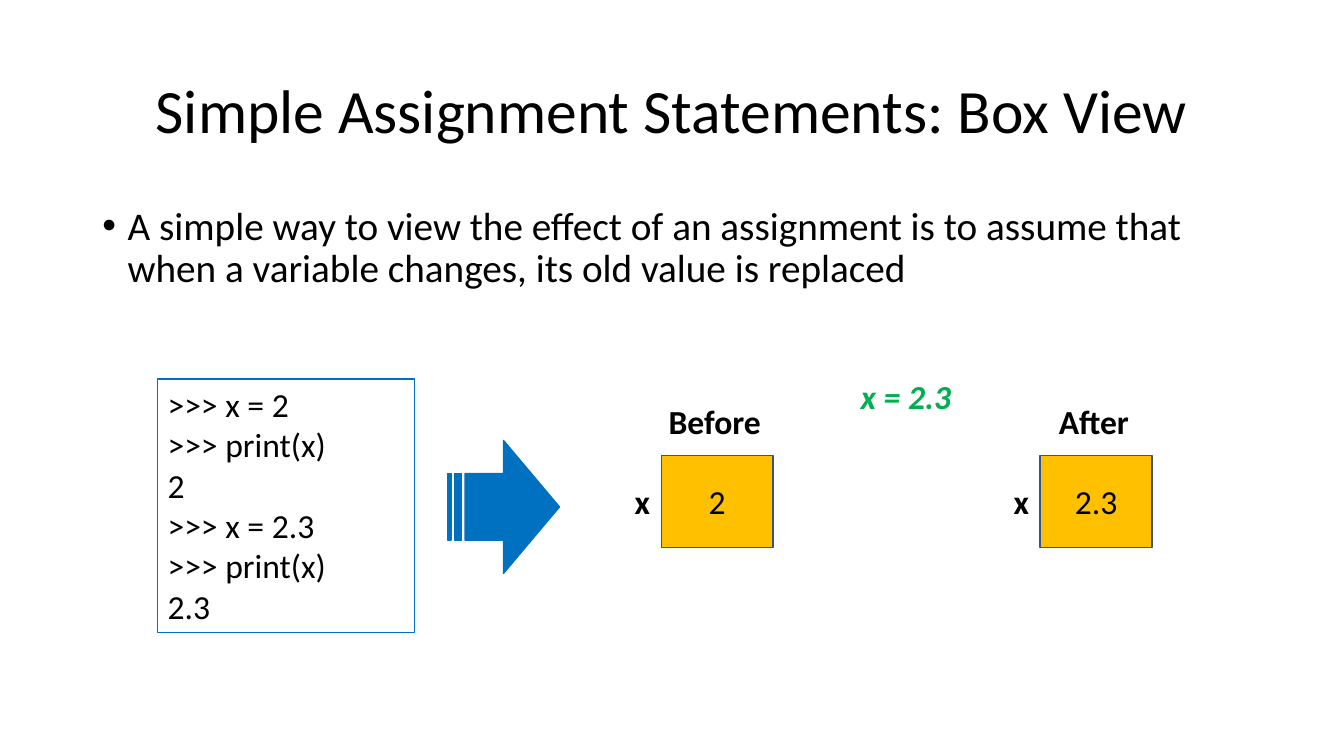
from lxml import etree
from pptx import Presentation
from pptx.dml.color import RGBColor
from pptx.enum.shapes import MSO_SHAPE
from pptx.enum.text import MSO_ANCHOR, PP_ALIGN
from pptx.oxml.ns import qn
from pptx.util import Pt

RECTANGLE = MSO_SHAPE.RECTANGLE
STRIPED_ARROW = MSO_SHAPE.STRIPED_RIGHT_ARROW
LEFT, CENTER = PP_ALIGN.LEFT, PP_ALIGN.CENTER
TOP, MIDDLE = MSO_ANCHOR.TOP, MSO_ANCHOR.MIDDLE

FONT = "Calibri"
COLORS = {
    "text": "000000",
    "blue": "0070C0",
    "amber": "FFC000",
    "box_edge": "325491",
    "green": "00B050",
}
SESSION = [">>> x = 2", ">>> print(x)", "2", ">>> x = 2.3", ">>> print(x)", "2.3"]

BOX_TOP, BOX_WIDTH, BOX_HEIGHT = 325.4, 79.9, 65.5
LABEL_HEIGHT = 36
NAME_WIDTH = 26


def rgb(name):
    return RGBColor.from_string(COLORS[name])


def place(shape, left, top, width, height):
    shape.left, shape.top = Pt(left), Pt(top)
    shape.width, shape.height = Pt(width), Pt(height)


def write(frame, lines, size=24, color="text", bold=False, italic=False,
          align=LEFT, anchor=TOP, wrap=True, line_spacing=None, space_before=None):
    frame.word_wrap = wrap
    frame.vertical_anchor = anchor
    for index, line in enumerate(lines):
        paragraph = frame.add_paragraph() if index else frame.paragraphs[0]
        paragraph.alignment = align
        if line_spacing is not None:
            paragraph.line_spacing = line_spacing
        if space_before is not None:
            paragraph.space_before = Pt(space_before)
        run = paragraph.add_run()
        run.text = line
        font = run.font
        font.name, font.size = FONT, Pt(size)
        font.bold, font.italic = bold, italic
        font.color.rgb = rgb(color)


def set_bullet(paragraph, indent):
    properties = paragraph._p.get_or_add_pPr()
    properties.set("marL", str(Pt(indent)))
    properties.set("indent", str(-Pt(indent)))
    etree.SubElement(properties, qn("a:buFont")).set("typeface", "Arial")
    etree.SubElement(properties, qn("a:buChar")).set("char", "•")


def add_block(slide, kind, left, top, width, height, fill=None, line="blue", line_width=1):
    block = slide.shapes.add_shape(kind, Pt(left), Pt(top), Pt(width), Pt(height))
    block.shadow.inherit = False
    if fill:
        block.fill.solid()
        block.fill.fore_color.rgb = rgb(fill)
    else:
        block.fill.background()
    block.line.color.rgb = rgb(line)
    block.line.width = Pt(line_width)
    return block


def add_label(slide, text, left, top, width, **text_format):
    label = slide.shapes.add_textbox(Pt(left), Pt(top), Pt(width), Pt(LABEL_HEIGHT))
    write(label.text_frame, [text], bold=True, wrap=False, **text_format)


def add_variable_box(slide, heading, value, left, heading_width):
    """Draw one state of x: its heading, its name and the box with its value."""
    box = add_block(slide, RECTANGLE, left, BOX_TOP, BOX_WIDTH, BOX_HEIGHT,
                    fill="amber", line="box_edge")
    write(box.text_frame, [value], align=CENTER, anchor=MIDDLE)
    heading_left = left + (BOX_WIDTH - heading_width) / 2 - 1
    add_label(slide, heading, heading_left, 283, heading_width)
    add_label(slide, "x", left - NAME_WIDTH, 340, NAME_WIDTH)


def main():
    deck = Presentation()
    deck.slide_width, deck.slide_height = Pt(960), Pt(540)
    slide = deck.slides.add_slide(deck.slide_layouts[1])

    title = slide.shapes.title
    place(title, 66, 28.75, 828, 104.4)
    write(title.text_frame, ["Simple Assignment Statements: Box View"],
          size=44, align=CENTER, anchor=MIDDLE, line_spacing=0.9)

    explanation = slide.placeholders[1]
    place(explanation, 66, 144, 851, 369.4)
    write(explanation.text_frame,
          ["A simple way to view the effect of an assignment is to assume that "
           "when a variable changes, its old value is replaced"],
          size=28, line_spacing=0.9, space_before=10)
    set_bullet(explanation.text_frame.paragraphs[0], 18)

    session = add_block(slide, RECTANGLE, 112.6, 270.7, 183.6, 181.4, line_width=0.75)
    write(session.text_frame, SESSION)

    add_block(slide, STRIPED_ARROW, 319.7, 314.6, 79.9, 95, fill="blue")

    add_variable_box(slide, "Before", "2", 472.3, 81.4)
    add_label(slide, "x = 2.3", 607.7, 265, 79.2, color="green", italic=True)
    add_variable_box(slide, "After", "2.3", 743, 65.5)

    deck.save("out.pptx")


if __name__ == "__main__":
    main()
